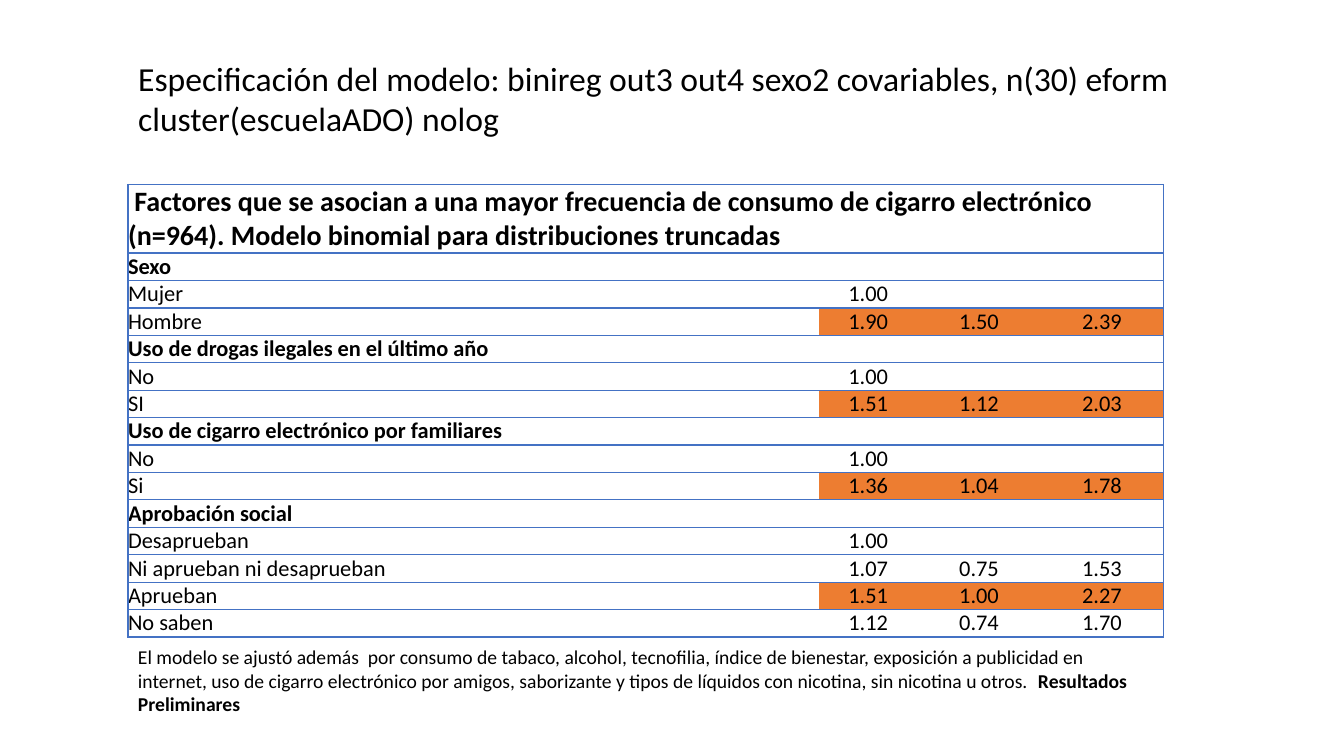
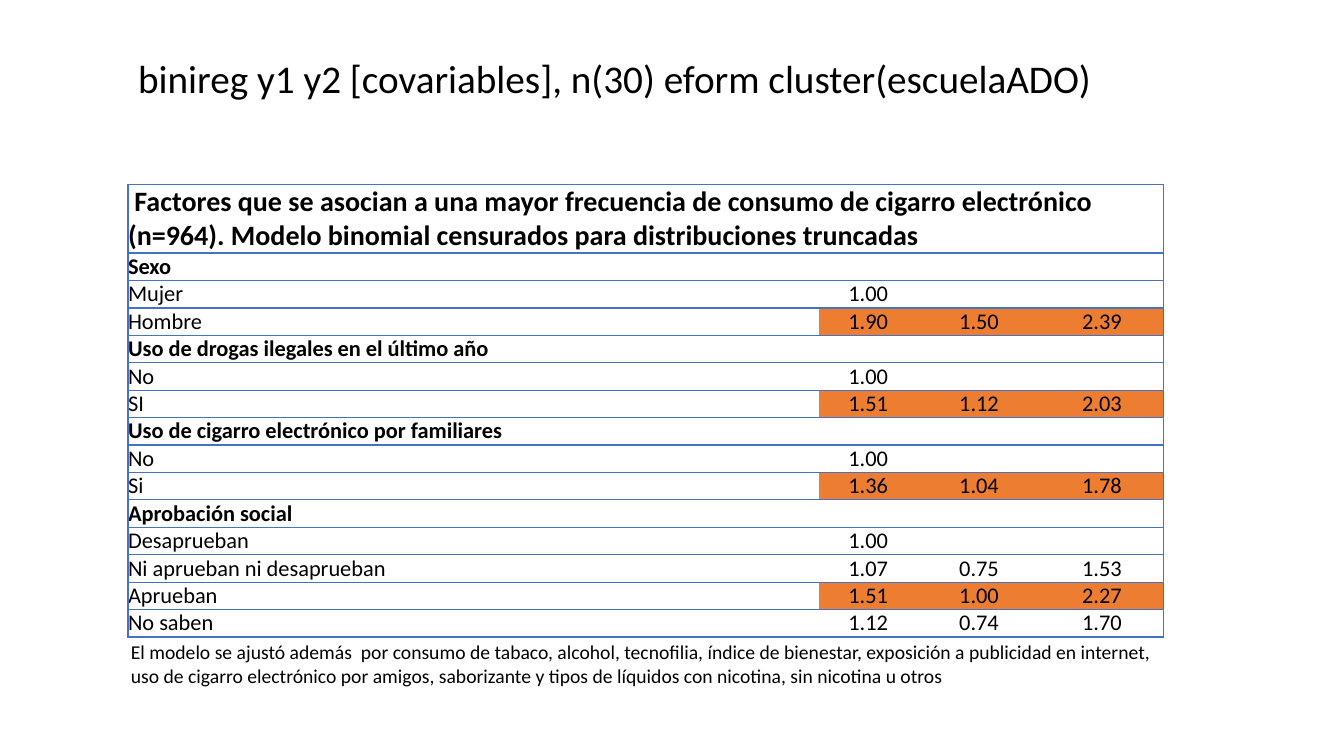
from lxml import etree
from pptx import Presentation
from pptx.dml.color import RGBColor
from pptx.enum import text
from pptx.oxml.ns import qn
from pptx.util import Inches, Pt

FONT = "Calibri"
BLACK = RGBColor(0x00, 0x00, 0x00)
WHITE = RGBColor(0xFF, 0xFF, 0xFF)
ORANGE = RGBColor(0xED, 0x7D, 0x31)
BLUE = RGBColor(0x44, 0x72, 0xC4)

LEFT, TABLE_TOP = 1.27, 1.83
COLUMN_WIDTHS = (6.85, 0.98, 1.22, 1.22)
HEADING_HEIGHT, ROW_HEIGHT = 0.64, 0.26
TABLE_SIZE = 16

FACTORS = (
    ("Sexo",),
    ("Mujer", "1.00"),
    ("Hombre", "1.90", "1.50", "2.39"),
    ("Uso de drogas ilegales en el último año",),
    ("No", "1.00"),
    ("SI", "1.51", "1.12", "2.03"),
    ("Uso de cigarro electrónico por familiares",),
    ("No", "1.00"),
    ("Si", "1.36", "1.04", "1.78"),
    ("Aprobación social",),
    ("Desaprueban", "1.00"),
    ("Ni aprueban ni desaprueban", "1.07", "0.75", "1.53"),
    ("Aprueban", "1.51", "1.00", "2.27"),
    ("No saben", "1.12", "0.74", "1.70"),
)
HEADING = (" Factores que se asocian a una mayor frecuencia de consumo de "
           "cigarro electrónico (n=964). Modelo binomial {}para "
           "distribuciones truncadas")
ADJUSTMENT = ("El modelo se ajustó además  por consumo de tabaco, alcohol, "
              "tecnofilia, índice de bienestar, exposición a publicidad en "
              "internet, uso de cigarro electrónico por amigos, saborizante y "
              "tipos de líquidos con nicotina, sin nicotina u otros")


def format_run(run, size, bold=False):
    """Apply the deck's font to a run."""
    run.font.name = FONT
    run.font.size = Pt(size)
    run.font.bold = bold
    run.font.color.rgb = BLACK


def add_title(slide, wording, size, top, width, height):
    """Place and format the slide title."""
    title = slide.shapes.title
    title.left, title.top = Inches(LEFT), Inches(top)
    title.width, title.height = Inches(width), Inches(height)
    frame = title.text_frame
    frame.text = wording
    frame.word_wrap = True
    frame.auto_size = text.MSO_AUTO_SIZE.NONE
    frame.vertical_anchor = text.MSO_ANCHOR.TOP
    frame.paragraphs[0].alignment = text.PP_ALIGN.LEFT
    format_run(frame.paragraphs[0].runs[0], size)


def add_footnote(slide, wording, left, top, width, height, emphasis=""):
    """Add the note under the table, with an optional bold ending."""
    note = slide.shapes.add_textbox(
        Inches(left), Inches(top), Inches(width), Inches(height))
    note.text_frame.word_wrap = True
    paragraph = note.text_frame.paragraphs[0]
    paragraph.text = wording
    format_run(paragraph.runs[0], 14)
    if emphasis:
        ending = paragraph.add_run()
        ending.text = emphasis
        format_run(ending, 14, bold=True)


def set_borders(cell, visible):
    """Draw the visible sides in blue and hide the other ones."""
    properties = cell._tc.get_or_add_tcPr()
    for side in "LRTB":
        line = etree.SubElement(properties, qn(f"a:ln{side}"), w=str(Pt(1)))
        if side in visible:
            fill = etree.SubElement(line, qn("a:solidFill"))
            etree.SubElement(fill, qn("a:srgbClr"), val=str(BLUE))
        else:
            etree.SubElement(line, qn("a:noFill"))


def fill_cell(cell, wording, size, bold, column, background):
    """Write one table cell with its alignment, borders and fill."""
    cell.margin_left = cell.margin_right = 0
    cell.margin_top = cell.margin_bottom = 0
    cell.vertical_anchor = (
        text.MSO_ANCHOR.MIDDLE if column else text.MSO_ANCHOR.BOTTOM)
    paragraph = cell.text_frame.paragraphs[0]
    if wording:
        paragraph.text = wording
        format_run(paragraph.runs[0], size, bold)
    else:
        etree.SubElement(paragraph._p, qn("a:endParaRPr"), sz=str(size * 100))
    paragraph.alignment = (
        text.PP_ALIGN.CENTER if column else text.PP_ALIGN.LEFT)
    last = len(COLUMN_WIDTHS) - 1
    set_borders(cell, "TB" + {0: "L", last: "R"}.get(column, ""))
    cell.fill.solid()
    cell.fill.fore_color.rgb = background


def is_significant(estimates):
    """Tell whether the lower confidence limit reaches one."""
    return len(estimates) == 3 and float(estimates[1]) >= 1


def add_factor_table(slide, heading):
    """Add the table of estimates, highlighting significant rows."""
    columns = len(COLUMN_WIDTHS)
    height = HEADING_HEIGHT + ROW_HEIGHT * len(FACTORS)
    table = slide.shapes.add_table(
        len(FACTORS) + 1, columns, Inches(LEFT), Inches(TABLE_TOP),
        Inches(sum(COLUMN_WIDTHS)), Inches(height)).table
    table.first_row = table.horz_banding = False
    for column, width in zip(table.columns, COLUMN_WIDTHS):
        column.width = Inches(width)
    for row in table.rows:
        row.height = Inches(ROW_HEIGHT)
    table.rows[0].height = Inches(HEADING_HEIGHT)

    for column in range(columns):
        fill_cell(table.cell(0, column), "" if column else heading,
                  20, True, column, WHITE)
    table.cell(0, 0).merge(table.cell(0, columns - 1))
    set_heading_edge = table.cell(0, 0)._tc.tcPr.find(qn("a:lnR"))
    set_heading_edge.remove(set_heading_edge[0])
    edge_fill = etree.SubElement(set_heading_edge, qn("a:solidFill"))
    etree.SubElement(edge_fill, qn("a:srgbClr"), val=str(BLUE))

    for index, (label, *estimates) in enumerate(FACTORS, start=1):
        highlight = ORANGE if is_significant(estimates) else WHITE
        padded = [label, *estimates] + [""] * (columns - 1 - len(estimates))
        for column, wording in enumerate(padded):
            fill_cell(table.cell(index, column), wording, TABLE_SIZE,
                      not estimates, column, highlight if column else WHITE)


def main():
    """Build and save the two model slides."""
    deck = Presentation()
    deck.slide_width, deck.slide_height = Inches(13.33), Inches(7.5)
    title_only = deck.slide_layouts[5]

    truncated = deck.slides.add_slide(title_only)
    add_title(truncated, "Especificación del modelo: binireg out3 out4 sexo2 "
              "covariables, n(30) eform cluster(escuelaADO) nolog",
              24, 0.52, 10.65, 0.91)
    add_factor_table(truncated, HEADING.format(""))
    add_footnote(truncated, ADJUSTMENT + ".  ", LEFT, 6.35, 10.27, 0.81,
                 emphasis="Resultados Preliminares")

    censored = deck.slides.add_slide(title_only)
    add_title(censored, "binireg y1 y2 [covariables], n(30) eform "
              "cluster(escuelaADO)", 28, 0.49, 10.27, 0.57)
    add_factor_table(censored, HEADING.format("censurados "))
    add_footnote(censored, ADJUSTMENT, 1.2, 6.3, 10.34, 0.57)

    deck.save("out.pptx")


if __name__ == "__main__":
    main()
